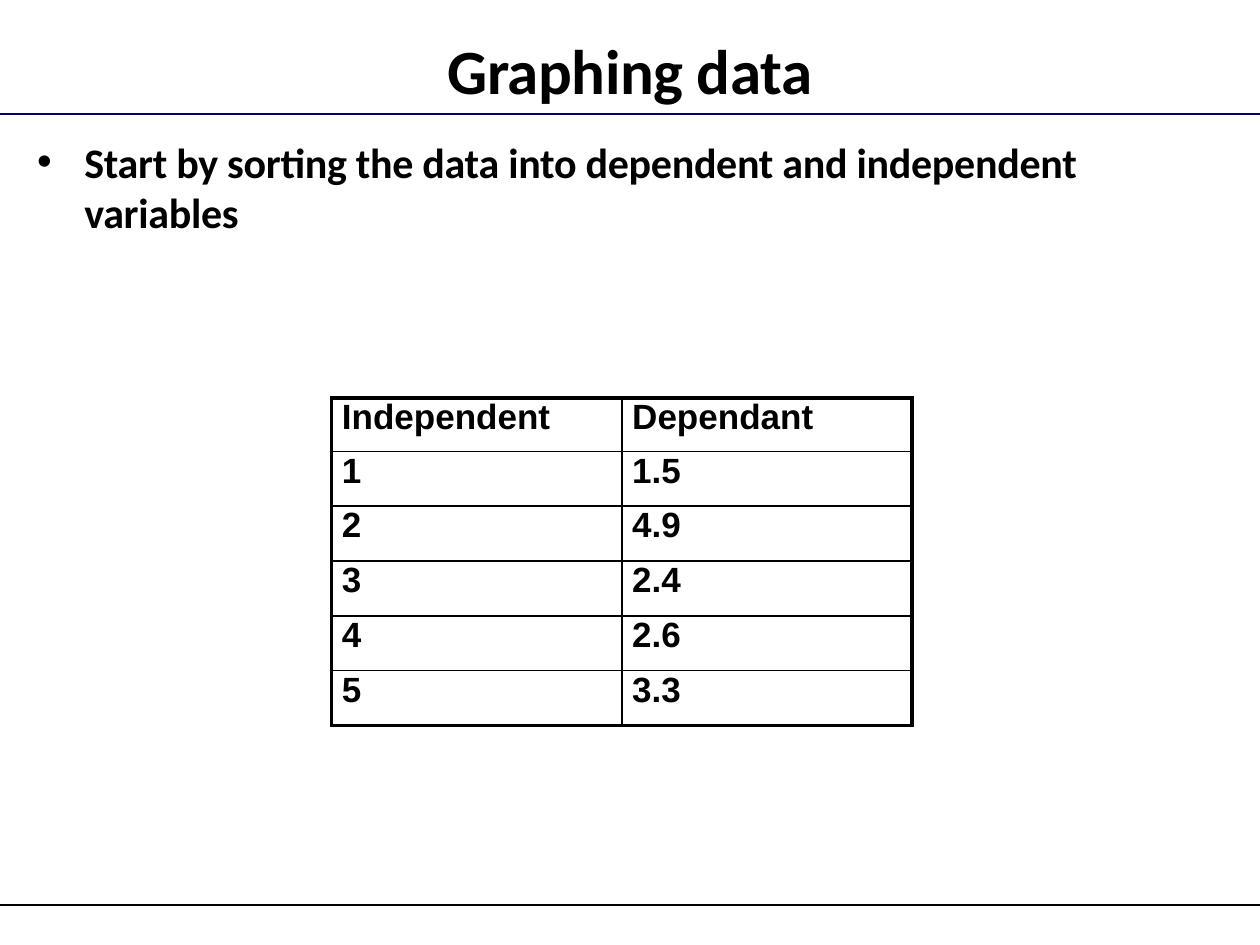
from dataclasses import dataclass

from lxml import etree
from pptx import Presentation
from pptx.dml.color import RGBColor
from pptx.enum.shapes import MSO_CONNECTOR
from pptx.enum.text import PP_ALIGN
from pptx.oxml.ns import qn
from pptx.util import Pt

STRAIGHT = MSO_CONNECTOR.STRAIGHT
LEFT, CENTER = PP_ALIGN.LEFT, PP_ALIGN.CENTER

SLIDE_W, SLIDE_H = 720, 540
ROWS = [
    ("Independent", "Dependant"),
    ("1", "1.5"),
    ("2", "4.9"),
    ("3", "2.4"),
    ("4", "2.6"),
    ("5", "3.3"),
]


@dataclass(frozen=True)
class Theme:
    text: str = "000000"
    rule: str = "000066"
    border: str = "000000"
    heading_font: str = "Calibri"
    table_font: str = "Arial"
    title_size: float = 36
    body_size: float = 24
    table_size: float = 20
    thin: float = 1
    thick: float = 2.25


THEME = Theme()


def write(tf, text, size, font, align=LEFT, spacing=0):
    """Put one bold paragraph in a text frame; spacing is in points."""
    p = tf.paragraphs[0]
    p.alignment = align
    r = p.add_run()
    r.text = text
    r.font.size = Pt(size)
    r.font.name = font
    r.font.bold = True
    r.font.color.rgb = RGBColor.from_string(THEME.text)
    if spacing:
        r.font._element.set("spc", str(round(spacing * 100)))
    return p


def add_text(s, x, y, w, h, text, **fmt):
    tf = s.shapes.add_textbox(Pt(x), Pt(y), Pt(w), Pt(h)).text_frame
    tf.word_wrap = True
    tf.margin_left = tf.margin_right = tf.margin_top = tf.margin_bottom = 0
    return write(tf, text, **fmt)


def add_bullet(p, indent, hang):
    pPr = p._p.get_or_add_pPr()
    pPr.set("marL", str(Pt(indent)))
    pPr.set("indent", str(-Pt(hang)))
    etree.SubElement(pPr, qn("a:buFont"), typeface="Arial")
    etree.SubElement(pPr, qn("a:buChar"), char="•")


def add_rule(s, y, color):
    """Draw a thin line across the whole slide."""
    line = s.shapes.add_connector(STRAIGHT, 0, Pt(y), Pt(SLIDE_W), Pt(y))
    line.line.color.rgb = RGBColor.from_string(color)
    line.line.width = Pt(THEME.thin)
    etree.SubElement(line._element.spPr, qn("a:effectLst"))


def set_borders(cell, **widths):
    tcPr = cell._tc.get_or_add_tcPr()
    for side in "LRTB":
        ln = etree.SubElement(tcPr, qn(f"a:ln{side}"), w=str(Pt(widths[side])))
        fill = etree.SubElement(ln, qn("a:solidFill"))
        etree.SubElement(fill, qn("a:srgbClr"), val=THEME.border)


def add_data_table(s, x, y, col_w, header_h, row_h):
    """Draw ROWS with a thick frame and thin inner lines."""
    last_row, last_col = len(ROWS) - 1, len(ROWS[0]) - 1
    table = s.shapes.add_table(
        last_row + 1, last_col + 1, Pt(x), Pt(y),
        Pt(col_w * (last_col + 1)), Pt(header_h + row_h * last_row)).table
    table.first_row = table.horz_banding = False
    for col in table.columns:
        col.width = Pt(col_w)
    for i, values in enumerate(ROWS):
        table.rows[i].height = Pt(row_h if i else header_h)
        for j, value in enumerate(values):
            cell = table.cell(i, j)
            cell.margin_left = Pt(6)
            cell.margin_right = cell.margin_top = cell.margin_bottom = 0
            write(cell.text_frame, value, THEME.table_size, THEME.table_font)
            outer = {"L": j == 0, "R": j == last_col,
                     "T": i == 0, "B": i == last_row}
            set_borders(cell, **{side: THEME.thick if edge else THEME.thin
                                 for side, edge in outer.items()})
            cell.fill.background()


def main():
    prs = Presentation()
    prs.slide_width, prs.slide_height = Pt(SLIDE_W), Pt(SLIDE_H)
    s = prs.slides.add_slide(prs.slide_layouts[6])

    add_rule(s, 65.2, THEME.rule)
    add_rule(s, 517, THEME.border)
    add_text(s, 145, 18, 430, 38, "Graphing data", size=THEME.title_size,
             font=THEME.heading_font, align=CENTER, spacing=-0.25)
    p = add_text(s, 20.2, 77.8, 612, 56,
                 "Start by sorting the data into dependent and independent variables",
                 size=THEME.body_size, font=THEME.heading_font, spacing=-0.17)
    add_bullet(p, indent=28, hang=27)
    add_data_table(s, x=189.4, y=227.5, col_w=165.9, header_h=30.5, row_h=31.3)

    prs.save("out.pptx")


if __name__ == "__main__":
    main()
